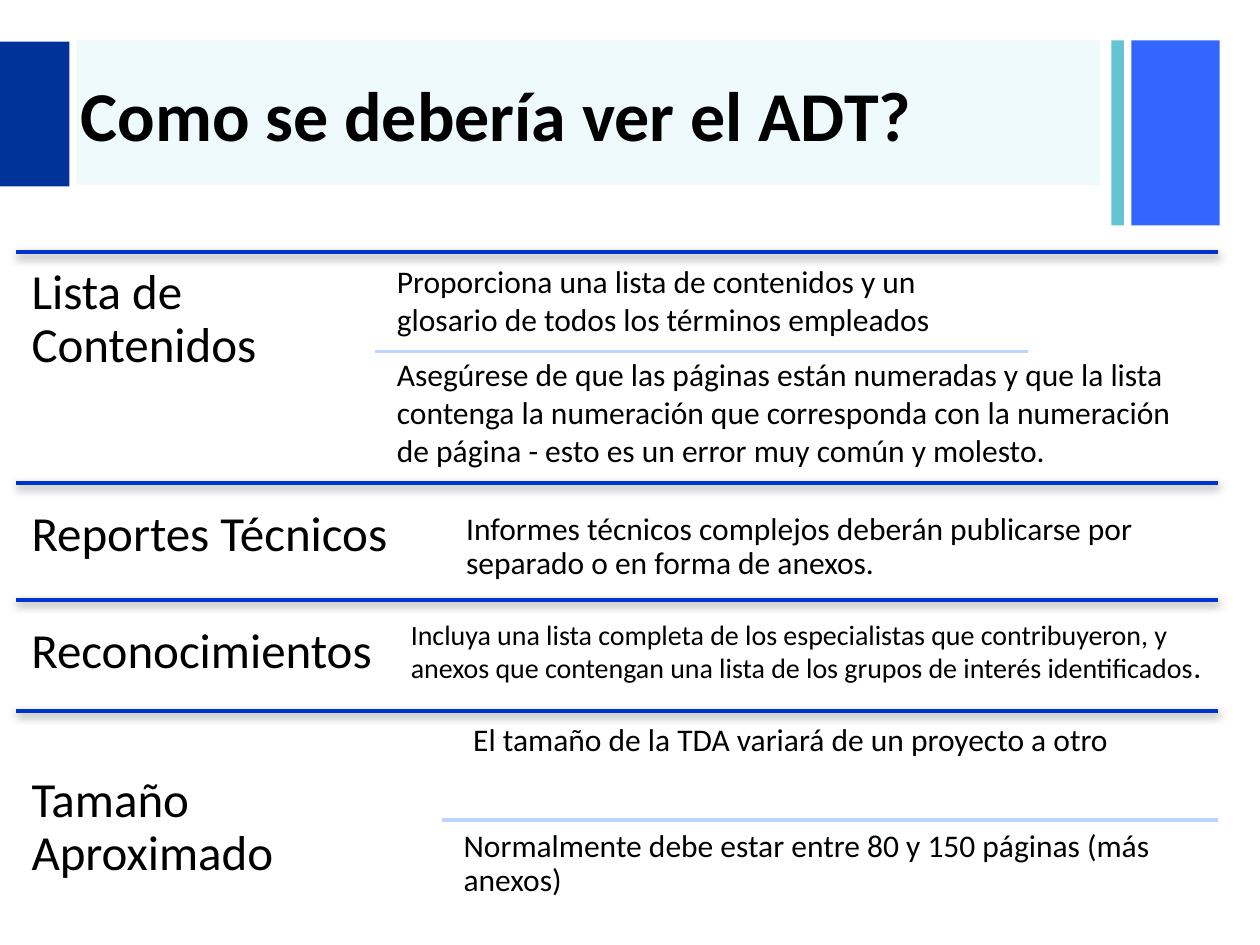
from lxml.etree import SubElement
from pptx import Presentation
from pptx.dml.color import RGBColor
from pptx.enum.shapes import MSO_CONNECTOR, MSO_SHAPE
from pptx.enum.text import MSO_ANCHOR, MSO_AUTO_SIZE, PP_ALIGN
from pptx.oxml.ns import qn
from pptx.util import Inches, Pt

COLORS = {
    "navy": "003399",
    "blue": "3366FF",
    "teal": "65C4D2",
    "aqua": "14C5D0",
    "rule": "0033CC",
    "divider": "BDD4FF",
    "shadow": "808080",
    "text": "000000",
}
FONT = "Calibri"
LEFT, RIGHT = 0.13, 9.67

# Each section: rule height, heading, heading box, entries (text, box, size, line spacing),
# divider (left, right, height) or None
SECTIONS = [
    (2.0, "Lista de Contenidos", (LEFT, 2.0, 2.85, 1.4), [
        ("Proporciona una lista de contenidos y un glosario de todos los términos empleados",
         (3.08, 2.01, 5.09, 0.44), 18, 1.0),
        ("Asegúrese de que las páginas están numeradas y que la lista contenga la numeración "
         "que corresponda con la numeración de página - esto es un error muy común y molesto.",
         (3.08, 2.75, 6.59, 0.93), 18, 1.0),
    ], (2.98, 8.16, 2.79)),
    (3.83, "Reportes Técnicos", (LEFT, 3.92, 3.38, 1.4), [
        ("Informes técnicos complejos deberán publicarse por separado o en forma de anexos.",
         (3.63, 4.0, 6.03, 0.49), 18, 0.9),
    ], None),
    (4.76, "Reconocimientos", (LEFT, 4.85, 2.96, 0.95), [
        ("Incluya una lista completa de los especialistas que contribuyeron, y anexos que "
         "contengan una lista de los grupos de interés identificados",
         (3.19, 4.86, 6.48, 1.07), 16, 0.9),
    ], None),
    (5.64, "Tamaño Aproximado", (LEFT, 6.03, 3.38, 1.4), [
        (" El tamaño de la TDA variará de un proyecto a otro",
         (3.63, 5.68, 6.04, 0.65), 18, 0.9),
        ("Normalmente debe estar entre 80 y 150 páginas (más anexos)",
         (3.61, 6.52, 6.04, 0.65), 18, 0.9),
    ], (3.51, RIGHT, 6.51)),
]


def color(name):
    return RGBColor.from_string(COLORS[name])


def format_span(span, size, bold=False):
    span.font.name = FONT
    span.font.size = Pt(size)
    span.font.bold = bold
    span.font.color.rgb = color("text")


def add_block(page, box, fill, opacity=None):
    block = page.shapes.add_shape(MSO_SHAPE.RECTANGLE, *map(Inches, box))
    block.shadow.inherit = False
    block.fill.solid()
    block.fill.fore_color.rgb = color(fill)
    block.line.fill.background()
    if opacity is not None:
        value = block.fill._xPr.find(".//" + qn("a:srgbClr"))
        SubElement(value, qn("a:alpha"), val=str(opacity * 1000))


def add_rule(page, left, right, height, stroke, width, shaded=False):
    rule = page.shapes.add_connector(
        MSO_CONNECTOR.STRAIGHT, *map(Inches, (left, height, right, height)))
    rule.line.color.rgb = color(stroke)
    rule.line.width = Pt(width)
    effects = SubElement(rule._element.spPr, qn("a:effectLst"))
    if shaded:
        shadow = SubElement(effects, qn("a:outerShdw"), blurRad=str(Pt(5)),
                            dist=str(Pt(2)), dir="5400000", rotWithShape="0")
        value = SubElement(shadow, qn("a:srgbClr"), val=COLORS["shadow"])
        SubElement(value, qn("a:alpha"), val="75000")


def add_text(page, text, box, size, spacing, inset):
    frame = page.shapes.add_textbox(*map(Inches, box)).text_frame
    frame.word_wrap = True
    frame.margin_left = frame.margin_right = Inches(inset)
    frame.margin_top = frame.margin_bottom = Inches(inset)
    frame.text = text
    para = frame.paragraphs[0]
    para.line_spacing = spacing
    format_span(para.runs[0], size)
    return para


def add_header(page):
    add_block(page, (8.98, 0.32, 0.7, 1.47), "blue")
    add_block(page, (8.82, 0.32, 0.1, 1.47), "teal")
    add_block(page, (0.61, 0.32, 8.12, 1.15), "aqua", opacity=7)
    add_block(page, (0, 0.33, 0.55, 1.15), "navy")

    title = page.shapes.title
    title.left, title.top, title.width, title.height = map(Inches, (0.54, 0.34, 8.27, 1.12))
    # Bring the title in front of the header blocks
    page.shapes._spTree.append(title._element)
    frame = title.text_frame
    frame.text = "Como se debería ver el ADT?"
    frame.auto_size = MSO_AUTO_SIZE.NONE
    frame.vertical_anchor = MSO_ANCHOR.MIDDLE
    para = frame.paragraphs[0]
    para.alignment = PP_ALIGN.LEFT
    format_span(para.runs[0], 40, bold=True)


def add_section(page, top, heading, heading_box, entries, divider):
    add_rule(page, LEFT, RIGHT, top, "rule", 2.25, shaded=True)
    add_text(page, heading, heading_box, 28, 0.9, 0.12)
    for text, box, size, spacing in entries:
        para = add_text(page, text, box, size, spacing, 0.07)
        if size == 16:
            # The smaller entry closes with a full-size stop
            stop = para.add_run()
            stop.text = "."
            format_span(stop, 18)
    if divider:
        add_rule(page, *divider, "divider", 2)


def main():
    deck = Presentation()
    deck.slide_width, deck.slide_height = Inches(10), Inches(7.5)
    page = deck.slides.add_slide(deck.slide_layouts[5])
    add_header(page)
    for section in SECTIONS:
        add_section(page, *section)
    deck.save("out.pptx")


if __name__ == "__main__":
    main()
